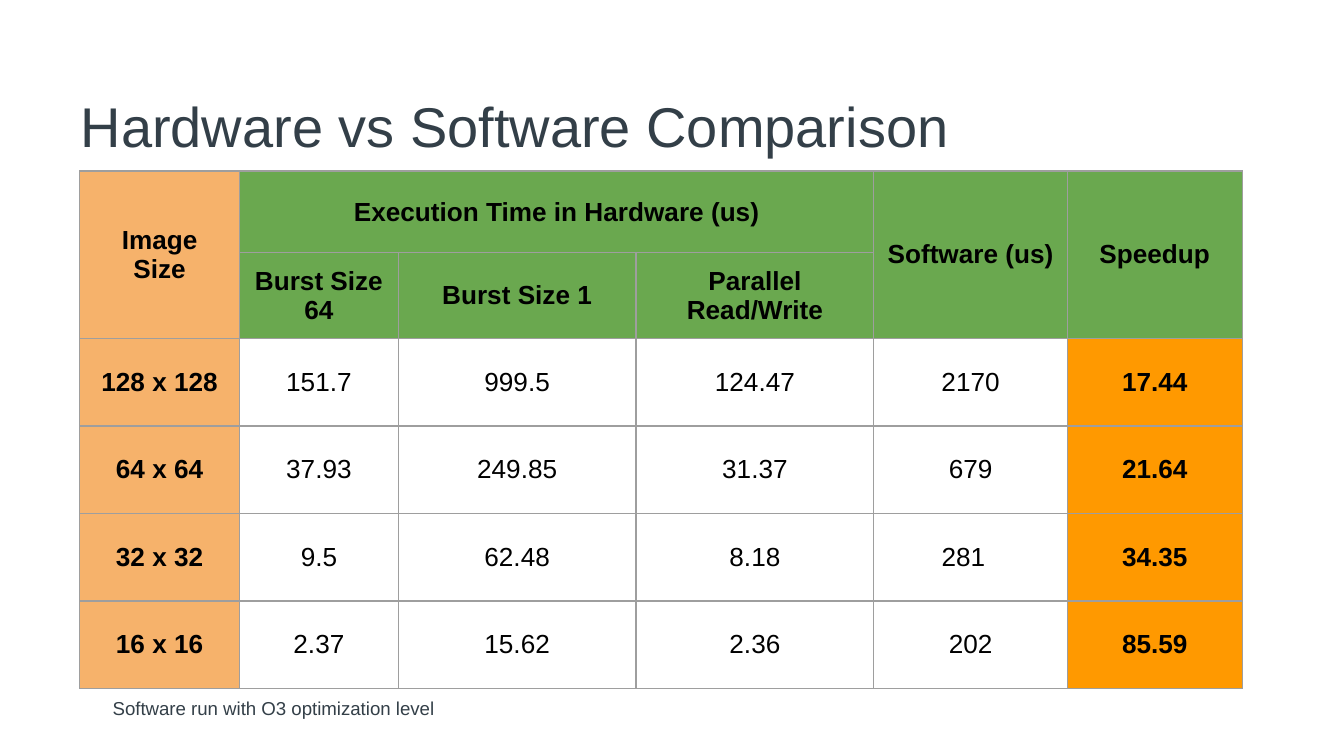
from lxml import etree
from pptx import Presentation
from pptx import util as u
from pptx.dml import color
from pptx.enum import text
from pptx.oxml import ns

FONT = "Arial"
COLORS = {
    "heading": "333F48",
    "text": "000000",
    "size": "F6B26B",
    "header": "6AA84F",
    "speedup": "FF9900",
    "border": "9E9E9E",
}
COLUMN_WIDTHS = [85.7, 85, 127.4, 127.4, 103.7, 93.6]
ROW_HEIGHTS = [43.9, 35.3] + [46.9] * 4
INSET = 7.2
HEADERS = [
    ["Image Size", "Execution Time in Hardware (us)", "", "",
     "Software (us)", "Speedup"],
    ["", "Burst Size 64", "Burst Size 1", "Parallel Read/Write", "", ""],
]
RESULTS = [
    ["128 x 128", "151.7", "999.5", "124.47", "2170", "17.44"],
    ["64 x 64", "37.93", "249.85", "31.37", "679", "21.64"],
    ["32 x 32", "9.5", "62.48", "8.18", "281", "34.35"],
    ["16 x 16", "2.37", "15.62", "2.36", "202", "85.59"],
]
# First and last cell of each merged header, as (row, column)
MERGES = [((0, 0), (1, 0)), ((0, 1), (0, 3)), ((0, 4), (1, 4)), ((0, 5), (1, 5))]


def rgb(name):
    return color.RGBColor.from_string(COLORS[name])


def add_run(paragraph, words, size, color_name, bold=False):
    run = paragraph.add_run()
    run.text = words
    run.font.name = FONT
    run.font.size = u.Pt(size)
    run.font.bold = bold
    run.font.color.rgb = rgb(color_name)


def set_insets(target, horizontal, vertical):
    target.margin_left = target.margin_right = u.Pt(horizontal)
    target.margin_top = target.margin_bottom = u.Pt(vertical)


def add_title(slide, words):
    title = slide.shapes.title
    title.left, title.top = u.Pt(36), u.Pt(33.1)
    title.width, title.height = u.Pt(648), u.Pt(67.7)
    frame = title.text_frame
    frame.auto_size = text.MSO_AUTO_SIZE.NONE
    frame.vertical_anchor = text.MSO_ANCHOR.MIDDLE
    set_insets(frame, INSET, 3.6)
    paragraph = frame.paragraphs[0]
    paragraph.alignment = text.PP_ALIGN.LEFT
    add_run(paragraph, words, 30, "heading")


def add_note(slide, words):
    box = slide.shapes.add_textbox(u.Pt(53.3), u.Pt(370.8), u.Pt(532), u.Pt(8.6))
    frame = box.text_frame
    frame.word_wrap = True
    set_insets(frame, INSET, INSET)
    add_run(frame.paragraphs[0], words, 10, "heading")


def set_borders(cell):
    properties = cell._tc.get_or_add_tcPr()
    for side in ("a:lnL", "a:lnR", "a:lnT", "a:lnB"):
        line = etree.SubElement(properties, ns.qn(side), w=str(u.Pt(0.75)))
        fill = etree.SubElement(line, ns.qn("a:solidFill"))
        etree.SubElement(fill, ns.qn("a:srgbClr"), val=COLORS["border"])


def fill_name(row, column):
    if column == 0:
        return "size"
    if row < len(HEADERS):
        return "header"
    return "speedup" if column == len(COLUMN_WIDTHS) - 1 else None


def format_cell(cell, words, background):
    set_borders(cell)
    if background:
        cell.fill.solid()
        cell.fill.fore_color.rgb = rgb(background)
    else:
        cell.fill.background()
    cell.vertical_anchor = text.MSO_ANCHOR.MIDDLE
    set_insets(cell, INSET, INSET)
    paragraph = cell.text_frame.paragraphs[0]
    paragraph.alignment = text.PP_ALIGN.CENTER
    if words:
        add_run(paragraph, words, 14, "text", bold=background is not None)


def add_results_table(slide):
    rows = HEADERS + RESULTS
    table = slide.shapes.add_table(
        len(rows), len(COLUMN_WIDTHS), u.Pt(42.7), u.Pt(91.6),
        u.Pt(sum(COLUMN_WIDTHS)), u.Pt(sum(ROW_HEIGHTS))).table
    table.first_row = table.horz_banding = False
    for column, width in zip(table.columns, COLUMN_WIDTHS):
        column.width = u.Pt(width)
    for row, height in zip(table.rows, ROW_HEIGHTS):
        row.height = u.Pt(height)

    for row_index, values in enumerate(rows):
        for column_index, words in enumerate(values):
            format_cell(table.cell(row_index, column_index), words,
                        fill_name(row_index, column_index))
    for first, last in MERGES:
        table.cell(*first).merge(table.cell(*last))

    # Image sizes carry space after; one software time sits left of centre
    for row_index in range(len(HEADERS), len(rows)):
        size_cell = table.cell(row_index, 0)
        size_cell.text_frame.paragraphs[0].space_after = u.Pt(10)
    table.cell(4, 4).margin_right = u.Pt(15)


def main():
    presentation = Presentation()
    presentation.slide_width, presentation.slide_height = u.Pt(720), u.Pt(405)
    slide = presentation.slides.add_slide(presentation.slide_layouts[5])

    add_title(slide, "Hardware vs Software Comparison")
    add_results_table(slide)
    add_note(slide, "Software run with O3 optimization level")

    presentation.save("out.pptx")


if __name__ == "__main__":
    main()
